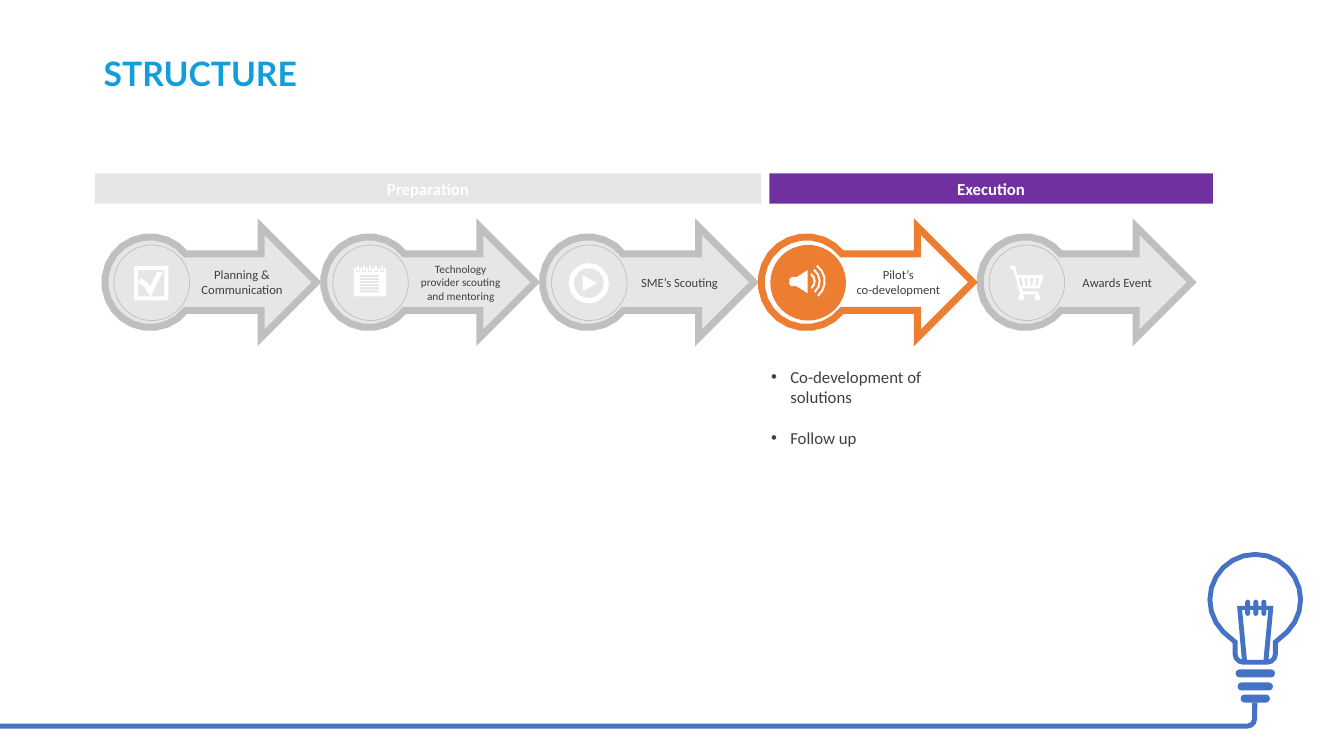
import math
from dataclasses import dataclass

import pptx
import pptx.dml.color
import pptx.enum.shapes
import pptx.enum.text
import pptx.oxml.ns
import pptx.util
from lxml import etree
from pptx.util import Inches

SHAPE = pptx.enum.shapes.MSO_SHAPE
ALIGN = pptx.enum.text.PP_ALIGN
ANCHOR = pptx.enum.text.MSO_ANCHOR


@dataclass(frozen=True)
class Theme:
    blue: str = "4472C4"
    title: str = "149DDB"
    purple: str = "7030A0"
    orange: str = "ED7D31"
    light: str = "E7E6E6"
    grey: str = "BFBFBF"
    text: str = "404040"
    white: str = "FFFFFF"
    body_font: str = "Calibri"
    title_font: str = "Lato"
    title_size: int = 24
    body_size: int = 12
    label_size: int = 9
    small_size: int = 8


THEME = Theme()
ROW_Y = 2.8
FIRST_STEP, STEP_PITCH = 1.04, 2.17


def rgb(value):
    return pptx.dml.color.RGBColor.from_string(value)


def paint(shape, fill, line=None, width=0):
    shape.shadow.inherit = False
    shape.fill.solid()
    shape.fill.fore_color.rgb = rgb(fill)
    if line is None:
        shape.line.fill.background()
        return
    shape.line.color.rgb = rgb(line)
    shape.line.width = pptx.util.Pt(width)
    outline = shape._element.spPr.find(pptx.oxml.ns.qn("a:ln"))
    etree.SubElement(outline, pptx.oxml.ns.qn("a:miter"), lim="800000")


def add_preset(slide, kind, left, top, width, height, fill, line=None, line_width=0):
    shape = slide.shapes.add_shape(kind, Inches(left), Inches(top), Inches(width), Inches(height))
    paint(shape, fill, line, line_width)
    return shape


def add_pill(slide, left, top, width, height, fill):
    shape = add_preset(slide, SHAPE.ROUNDED_RECTANGLE, left, top, width, height, fill)
    shape.adjustments[0] = 0.5


def add_outline(slide, contours, fill, line=None, line_width=0, origin=(0, 0)):
    """Draw closed contours, in inches from origin, as one shape; inner contours are holes."""
    builder = None
    for contour in contours:
        points = [(Inches(origin[0] + x), Inches(origin[1] + y)) for x, y in contour]
        if builder is None:
            builder = slide.shapes.build_freeform(*points[0])
        else:
            builder.move_to(*points[0])
        builder.add_line_segments(points[1:], close=True)
    paint(builder.convert_to_shape(), fill, line, line_width)


def arc(x, y, radius, start, end):
    """Points on a circle, as few as look round; degrees run clockwise from the right."""
    widest = math.degrees(2 * math.acos(1 - 0.004 / radius))
    steps = math.ceil(abs(end - start) / widest)
    angles = [math.radians(start + (end - start) * i / steps) for i in range(steps + 1)]
    return [(x + radius * math.cos(a), y + radius * math.sin(a)) for a in angles]


def band(x, y, outer, inner, start, end):
    return arc(x, y, outer, start, end) + arc(x, y, inner, end, start)


def box(left, top, right, bottom):
    return [(left, top), (right, top), (right, bottom), (left, bottom)]


def write(shape, lines, size, color, font=THEME.body_font, bold=False,
          align=ALIGN.CENTER, anchor=ANCHOR.MIDDLE):
    frame = shape.text_frame
    frame.word_wrap = True
    frame.vertical_anchor = anchor
    frame.text = "\n".join(lines)
    for paragraph in frame.paragraphs:
        paragraph.alignment = align
        for run in paragraph.runs:
            run.font.name = font
            run.font.size = pptx.util.Pt(size)
            run.font.bold = bold
            run.font.color.rgb = rgb(color)
    return frame


def add_text(slide, left, top, width, height, lines, size, color, **style):
    shape = slide.shapes.add_textbox(Inches(left), Inches(top), Inches(width), Inches(height))
    return write(shape, lines, size, color, **style)


def add_bullets(slide, left, top, width, height, lines):
    frame = add_text(slide, left, top, width, height, lines, THEME.body_size, THEME.text,
                     align=ALIGN.LEFT, anchor=ANCHOR.TOP)
    for index, paragraph in enumerate(frame.paragraphs):
        properties = paragraph._p.get_or_add_pPr()
        properties.set("marL", str(Inches(0.19)))
        properties.set("indent", str(-Inches(0.19)))
        if index:
            paragraph.space_before = pptx.util.Pt(14.5)
        etree.SubElement(properties, pptx.oxml.ns.qn("a:buFont"), typeface="Arial")
        etree.SubElement(properties, pptx.oxml.ns.qn("a:buChar"), char="•")


def add_phase(slide, left, width, name, fill):
    bar = add_preset(slide, SHAPE.RECTANGLE, left, 1.72, width, 0.3, fill)
    write(bar, [name], THEME.body_size, THEME.white, bold=True)


def check_icon():
    tick = [(-0.01, 0.14), (-0.07, 0.04), (-0.12, 0.01), (-0.11, -0.04), (-0.05, -0.01),
            (-0.01, 0.04), (0.06, -0.1), (0.12, -0.1), (0.05, 0.02), (0, 0.14)]
    return [box(-0.17, -0.16, 0.17, 0.18), box(-0.13, -0.12, 0.13, 0.14), tick]


def notepad_icon():
    contours = [box(-0.16, -0.14, 0.16, 0.14)]
    contours += [box(-0.1, -0.07 + 0.03 * row, 0.09, -0.05 + 0.03 * row) for row in range(6)]
    for ring in range(-2, 3):
        x = 0.06 * ring
        contours += [box(x - 0.02, -0.14, x + 0.02, -0.1), box(x - 0.01, -0.16, x + 0.01, -0.11)]
    return contours


def play_icon():
    return [arc(0, 0.01, 0.2, 0, 360), arc(0, 0.01, 0.15, 0, 360),
            [(-0.06, -0.07), (0.08, 0.01), (-0.06, 0.09)]]


def megaphone_icon():
    horn = [(0, -0.12), (0, 0.11), (-0.11, 0.04), (-0.16, 0.04), (-0.18, 0.02),
            (-0.18, -0.03), (-0.16, -0.05), (-0.11, -0.05)]
    waves = [band(-0.02, -0.01, radius, radius - 0.02, -54, 50) for radius in (0.1, 0.15, 0.2)]
    return [horn] + waves


def cart_icon():
    body = [(-0.16, -0.16), (-0.11, -0.16), (-0.09, -0.07), (0.16, -0.07), (0.17, -0.06),
            (0.13, 0.06), (-0.05, 0.06), (-0.04, 0.09), (0.12, 0.09), (0.12, 0.12),
            (-0.06, 0.12), (-0.13, -0.13), (-0.16, -0.13)]
    gaps = [[(left, -0.04), (right, -0.04), (low_right, 0.04), (low_left, 0.04)]
            for left, right, low_left, low_right in (
                (-0.08, -0.05, -0.06, -0.03), (-0.02, 0.01, -0.01, 0.01),
                (0.04, 0.07, 0.04, 0.06), (0.1, 0.13, 0.09, 0.11))]
    return [body] + gaps + [arc(x, 0.15, 0.03, 0, 360) for x in (-0.05, 0.11)]


def add_step(slide, column, lines, icon, size=THEME.label_size, active=False):
    left = FIRST_STEP + STEP_PITCH * column
    center = left + 0.46
    bend = math.degrees(math.asin(0.28 / 0.45))
    arrow = arc(0.45, 0, 0.45, bend, 360 - bend) + [
        (1.55, -0.28), (1.55, -0.55), (2.1, 0), (1.55, 0.55), (1.55, 0.28)]
    add_outline(slide, [arrow], THEME.white if active else THEME.light,
                THEME.orange if active else THEME.grey, 5, origin=(left, ROW_Y))
    add_preset(slide, SHAPE.OVAL, center - 0.37, 2.43, 0.75, 0.75,
               THEME.orange if active else THEME.light, None if active else THEME.grey, 0.5)
    add_outline(slide, icon, THEME.white, origin=(center, ROW_Y))
    add_text(slide, left + 0.83, 2.55, 1.06, 0.5, lines, size, THEME.text)


def add_light_bulb(slide):
    x = 12.45
    glass = (arc(x, 5.95, 0.45, 135, 405) + [(x + 0.2, 6.37)]
             + arc(x + 0.12, 6.49, 0.08, 0, 90) + arc(x - 0.12, 6.49, 0.08, 90, 180)
             + [(x - 0.2, 6.37)])
    add_outline(slide, [glass], THEME.white, THEME.blue, 3.5)
    for top, width in ((6.64, 0.39), (6.77, 0.35), (6.89, 0.29)):
        add_pill(slide, x - width / 2, top, width, 0.08, THEME.blue)
    filament = [(-0.18, 6.01), (0.18, 6.01), (0.13, 6.57), (0.08, 6.57),
                (0.13, 6.05), (-0.13, 6.05), (-0.08, 6.57), (-0.13, 6.57)]
    add_outline(slide, [filament], THEME.blue, origin=(x, 0))
    for pin in (-1, 0, 1):
        add_pill(slide, x + 0.08 * pin - 0.02, 5.95, 0.05, 0.16, THEME.blue)
    cable = ([(0, 7.18)] + arc(12.37, 7.13, 0.05, 90, 0) + [(12.42, 6.97), (12.47, 6.97)]
             + arc(12.37, 7.13, 0.1, 0, 90) + [(0, 7.23)])
    add_outline(slide, [cable], THEME.blue)


def main():
    presentation = pptx.Presentation()
    presentation.slide_width, presentation.slide_height = Inches(13.33), Inches(7.5)
    slide = presentation.slides.add_slide(presentation.slide_layouts[6])
    add_light_bulb(slide)
    add_text(slide, 0.93, 0.48, 8.21, 0.5, ["STRUCTURE"], THEME.title_size, THEME.title,
             font=THEME.title_font, bold=True, align=ALIGN.LEFT, anchor=ANCHOR.TOP)
    add_phase(slide, 0.94, 6.61, "Preparation", THEME.light)
    add_phase(slide, 7.63, 4.4, "Execution", THEME.purple)
    add_step(slide, 0, ["Planning & Communication"], check_icon())
    add_step(slide, 1, ["Technology provider scouting and mentoring"], notepad_icon(),
             THEME.small_size)
    add_step(slide, 2, ["SME’s Scouting"], play_icon())
    add_step(slide, 4, ["Awards Event"], cart_icon())
    add_step(slide, 3, ["Pilot’s", "co-development"], megaphone_icon(), active=True)
    add_bullets(slide, 7.55, 3.59, 1.77, 1.11, ["Co-development of solutions", "Follow up"])
    presentation.save("out.pptx")


if __name__ == "__main__":
    main()
